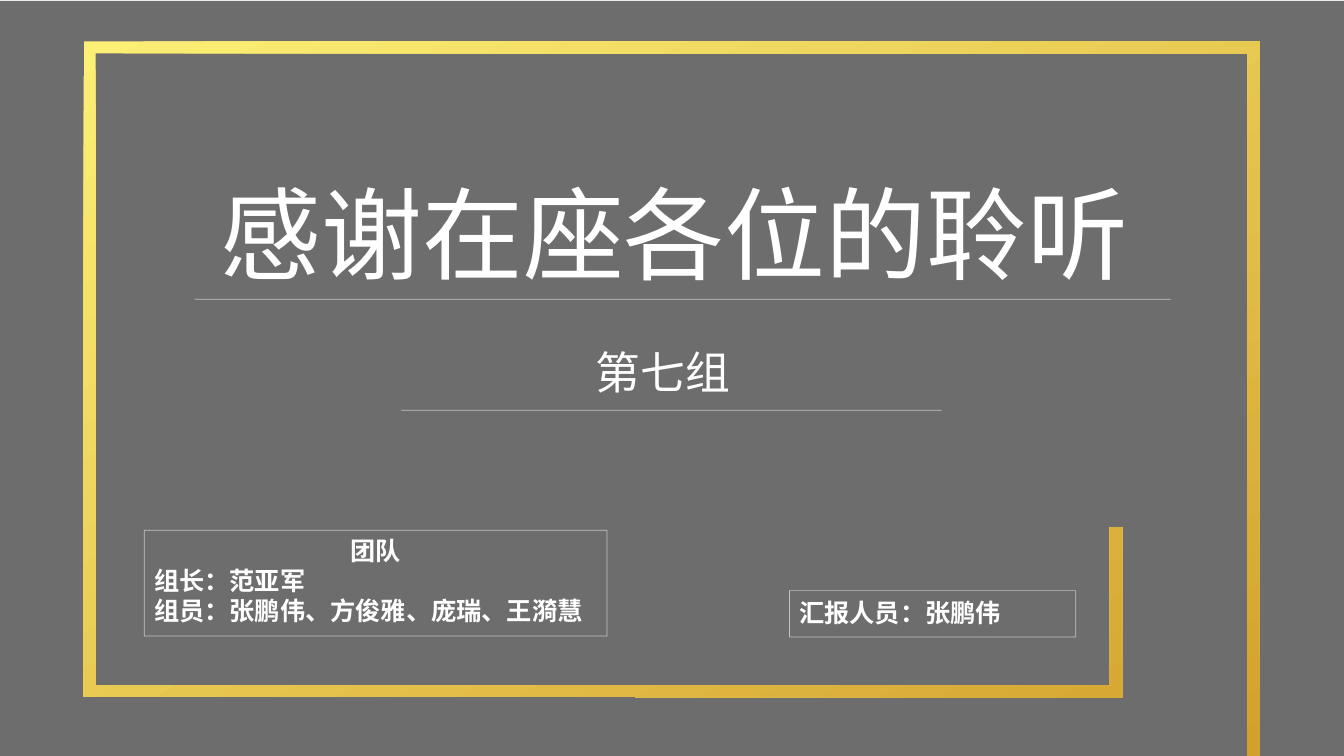
from dataclasses import dataclass

import pptx
import pptx.dml.color
import pptx.enum.shapes
import pptx.enum.text
import pptx.oxml
import pptx.oxml.ns
import pptx.util
from pptx.util import Inches

RGB = pptx.dml.color.RGBColor.from_string
SHAPE = pptx.enum.shapes.MSO_SHAPE
LEFT = pptx.enum.text.PP_ALIGN.LEFT
CENTER = pptx.enum.text.PP_ALIGN.CENTER


@dataclass(frozen=True)
class Theme:
    font: str = "Noto Sans CJK SC"
    backdrop: str = "0C0C0C"
    white: str = "FFFFFF"
    gold: tuple = ("FCEF75", "D3A02D")
    opacity: int = 60
    hairline: float = 0.5
    title: int = 72
    subtitle: int = 32
    body: int = 18


THEME = Theme()

FRAME = [
    (0.83, 0.41), (12.49, 0.41), (12.49, 7.51), (12.37, 7.51),
    (12.37, 0.53), (0.95, 0.53), (0.95, 6.8), (11.01, 6.8),
    (11.01, 5.23), (11.13, 5.23), (11.13, 6.92), (0.83, 6.91),
]


def sub_element(parent, tag, **attrs):
    el = pptx.oxml.parse_xml(f"<{tag} {pptx.oxml.ns.nsdecls('a')}/>")
    for name, value in attrs.items():
        el.set(name, value)
    parent.append(el)
    return el


def set_opacity(fill, sp):
    """Make the solid colour of a fill, already set on sp, partly transparent."""
    clr = sp._element.spPr.find(f".//{pptx.oxml.ns.qn('a:srgbClr')}")
    sub_element(clr, "a:alpha", val=str(THEME.opacity * 1000))


def style_hairline(sp):
    sp.line.width = pptx.util.Pt(THEME.hairline)
    sp.line.color.rgb = RGB(THEME.white)
    set_opacity(sp.line.fill, sp)


def add_backdrop(s, width, height):
    sp = s.shapes.add_shape(SHAPE.RECTANGLE, 0, Inches(0.01), width, height)
    sp.shadow.inherit = False
    sp.line.fill.background()
    sp.fill.solid()
    sp.fill.fore_color.rgb = RGB(THEME.backdrop)
    set_opacity(sp.fill, sp)


def add_frame(s):
    points = [(Inches(x), Inches(y)) for x, y in FRAME]
    fb = s.shapes.build_freeform(*points[0])
    fb.add_line_segments(points[1:], close=True)
    sp = fb.convert_to_shape()
    sp.shadow.inherit = False
    sp.line.fill.background()
    sp.fill.gradient()
    sp.fill.gradient_angle = 300
    for stop, color, position in zip(sp.fill.gradient_stops, THEME.gold, (0, 1)):
        stop.color.rgb = RGB(color)
        stop.position = position


def add_rule(s, left, right, y):
    cx = s.shapes.add_connector(
        pptx.enum.shapes.MSO_CONNECTOR.STRAIGHT,
        Inches(left), Inches(y), Inches(right), Inches(y))
    style_hairline(cx)
    sub_element(cx._element.spPr, "a:effectLst")


def add_outline(s, left, top, width, height):
    sp = s.shapes.add_shape(SHAPE.RECTANGLE, *map(Inches, (left, top, width, height)))
    sp.fill.background()
    style_hairline(sp)
    sp.shadow.inherit = False


def add_text(s, box, lines, size, bold=False, wrap=True):
    """Add a text box; lines holds (text, alignment) pairs."""
    tf = s.shapes.add_textbox(*map(Inches, box)).text_frame
    tf.word_wrap = wrap
    for i, (text, align) in enumerate(lines):
        p = tf.add_paragraph() if i else tf.paragraphs[0]
        p.alignment = align
        r = p.add_run()
        r.text = text
        r.font.size = pptx.util.Pt(size)
        r.font.bold = bold
        r.font.color.rgb = RGB(THEME.white)
        r.font.name = THEME.font
        sub_element(r.font._element, "a:ea", typeface=THEME.font)


def main():
    prs = pptx.Presentation()
    prs.slide_width, prs.slide_height = Inches(13.33), Inches(7.5)
    s = prs.slides.add_slide(prs.slide_layouts[6])

    add_backdrop(s, prs.slide_width, prs.slide_height)
    add_frame(s)
    add_rule(s, 1.93, 11.61, 2.97)
    add_rule(s, 3.98, 9.34, 4.07)
    add_text(s, (2.09, 1.65, 9.29, 1.31), [("感谢在座各位的聆听", LEFT)], THEME.title)
    add_text(s, (3.81, 3.37, 5.53, 0.64), [("第七组", CENTER)], THEME.subtitle)

    add_outline(s, 1.43, 5.26, 4.59, 1.05)
    team = [
        ("团队", CENTER),
        ("组长：范亚军", LEFT),
        ("组员：张鹏伟、方俊雅、庞瑞、王漪慧", LEFT),
    ]
    add_text(s, (1.43, 5.26, 4.59, 1.01), team, THEME.body, bold=True)

    add_outline(s, 7.83, 5.86, 2.84, 0.46)
    add_text(s, (7.83, 5.88, 2.24, 0.4), [("汇报人员：张鹏伟", LEFT)],
             THEME.body, bold=True, wrap=False)

    prs.save("out.pptx")


if __name__ == "__main__":
    main()
